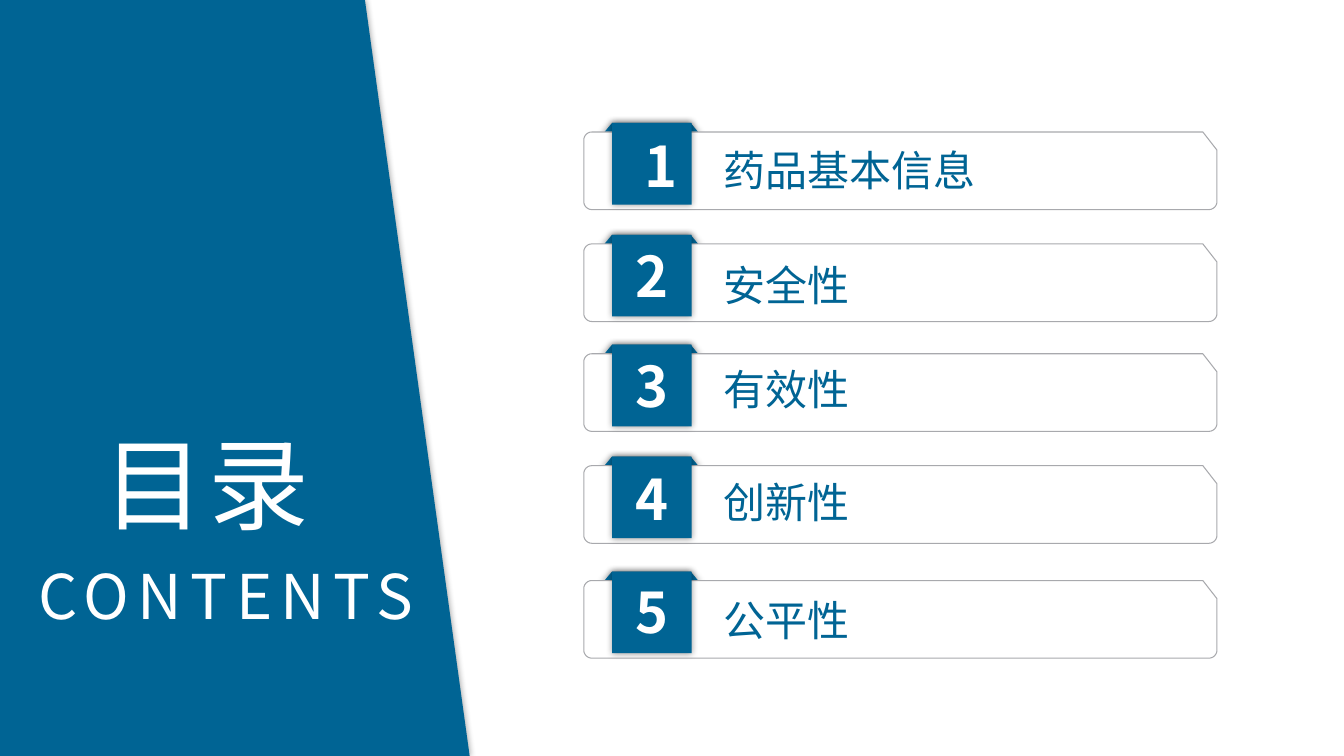
"""Build a contents slide with five numbered cards."""
from math import cos, radians, sin

from lxml import etree
from pptx import Presentation
from pptx.dml.color import RGBColor
from pptx.enum.shapes import MSO_SHAPE
from pptx.enum.text import MSO_AUTO_SIZE, PP_ALIGN
from pptx.oxml.ns import qn
from pptx.util import Inches, Pt

RECT = MSO_SHAPE.RECTANGLE
GROW = MSO_AUTO_SIZE.SHAPE_TO_FIT_TEXT
LEFT, CENTER = PP_ALIGN.LEFT, PP_ALIGN.CENTER
BLUE = RGBColor(0x00, 0x64, 0x94)
WHITE = RGBColor(0xFF, 0xFF, 0xFF)
GRAY = RGBColor(0xA8, 0xA9, 0xAD)
FONT = "Noto Sans CJK SC"


def paint(shape):
    """Fill a shape blue and give it a soft shadow."""
    shape.fill.solid()
    shape.fill.fore_color.rgb = BLUE
    shape.line.fill.background()
    shape.shadow.inherit = False
    effects = shape._element.spPr.find(qn("a:effectLst"))
    glow = etree.SubElement(effects, qn("a:outerShdw"), blurRad=str(Pt(5)), dist="0",
                            dir="0", algn="ctr", rotWithShape="0")
    color = etree.SubElement(glow, qn("a:srgbClr"), val="000000")
    etree.SubElement(color, qn("a:alpha"), val="40000")


def write(text, box, size, color, align=CENTER, bold=False, gap=0, pad=(0.1, 0.05)):
    """Add one line of text."""
    frame = shapes.add_textbox(*map(Inches, box)).text_frame
    frame.word_wrap = False
    frame.auto_size = GROW
    frame.margin_left = frame.margin_right = Inches(pad[0])
    frame.margin_top = frame.margin_bottom = Inches(pad[1])
    line = frame.paragraphs[0]
    line.text = text
    line.alignment = align
    run = line.runs[0]
    run.font.size = Pt(size)
    run.font.bold = bold
    run.font.color.rgb = color
    run.font.name = FONT
    props = run._r.get_or_add_rPr()
    etree.SubElement(props, qn("a:ea"), typeface=FONT)
    if gap:
        props.set("spc", str(gap * 100))


deck = Presentation()
deck.slide_width = Inches(13.33)
deck.slide_height = Inches(7.5)
shapes = deck.slides.add_slide(deck.slide_layouts[6]).shapes

panel = shapes.build_freeform(0, 0)
panel.add_line_segments([(Inches(x), Inches(y))
                         for x, y in ((3.62, 0), (4.66, 7.51), (0, 7.51))])
paint(panel.convert_to_shape())
write("目录", (0.86, 4.11, 2.37, 1.35), 72, WHITE, gap=3, pad=(0.13, 0.07))
write("CONTENTS", (0.11, 5.46, 4.26, 0.88), 44, WHITE, gap=6, pad=(0.13, 0.07))

rows = [
    ("药品基本信息", 1.22, 1.38, 1.26, 6.29, 0.33),
    ("安全性", 2.33, 2.53, 2.35, 6.21, 0.5),
    ("有效性", 3.42, 3.56, 3.44, 6.21, 0.5),
    ("创新性", 4.53, 4.68, 4.56, 6.21, 0.5),
    ("公平性", 5.67, 5.85, 5.68, 6.21, 0.5),
]
x1, x2, round_r = 5.79, 12.07, 0.08

for num, (title, top, title_y, num_y, num_x, num_w) in enumerate(rows, 1):
    ear = shapes.build_freeform(Inches(6.07), Inches(top))
    ear.add_line_segments([(Inches(x), Inches(top + y))
                           for x, y in ((6.85, 0), (6.95, 0.12), (5.97, 0.12))])
    paint(ear.convert_to_shape())

    y1, y2 = top + 0.09, top + 0.86
    edge = [(x2 - 0.14, y1), (x2, y1 + 0.18)]
    for x, y, start in ((x2 - round_r, y2 - round_r, 0),
                        (x1 + round_r, y2 - round_r, 90),
                        (x1 + round_r, y1 + round_r, 180)):
        for step in range(0, 91, 15):
            turn = radians(start + step)
            edge.append((x + round_r * cos(turn), y + round_r * sin(turn)))
    edge = [(Inches(x), Inches(y)) for x, y in edge]
    outline = shapes.build_freeform(*edge[0])
    outline.add_line_segments(edge[1:])
    card = outline.convert_to_shape()
    card.fill.solid()
    card.fill.fore_color.rgb = WHITE
    card.line.color.rgb = GRAY
    card.line.width = Pt(0)
    card.shadow.inherit = False

    paint(shapes.add_shape(RECT, *map(Inches, (6.07, top, 0.79, 0.81))))
    width = 2.73 if len(title) > 3 else 1.46
    write(title, (7.08, title_y, width, 0.61), 30, BLUE, align=LEFT)
    write(str(num), (num_x, num_y, num_w, 0.77), 40, WHITE, bold=True)

deck.save("out.pptx")
